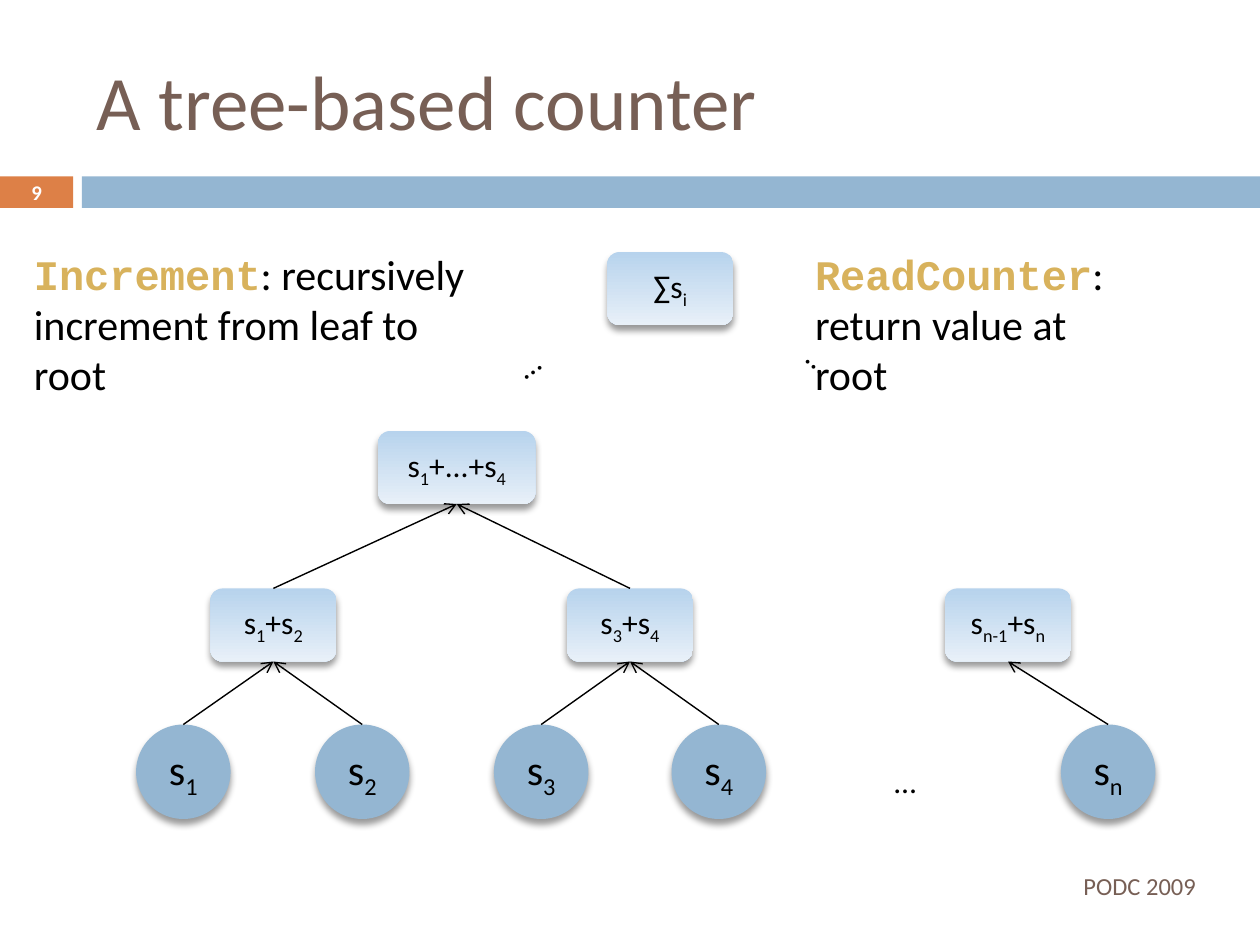
from lxml import etree
from pptx import Presentation
from pptx import util as u
from pptx.dml import color
from pptx.enum import shapes, text
from pptx.oxml import ns

BLUE, BROWN, GOLD = "94B6D2", "775F55", "D8B25C"
BLACK, WHITE, ORANGE = "000000", "FFFFFF", "DD8047"
LEFT, MID, RIGHT = text.PP_ALIGN.LEFT, text.PP_ALIGN.CENTER, text.PP_ALIGN.RIGHT

BARS = [(0, 0.58, ORANGE), (0.65, 9.35, BLUE)]
LEAVES = [("s|1", 1.08), ("s|2", 2.5), ("s|3", 3.92), ("s|4", 5.33), ("s|n", 8.42)]
SUMS = [
    ("s|1|+s|2", 1.67, 4.67, 1),
    ("s|3|+s|4", 4.5, 4.67, 1),
    ("s|n-1|+s|n", 7.5, 4.67, 1),
    ("s|1|+...+s|4", 3, 3.42, 1.25),
    ("∑s|i", 4.82, 2, 1),
]
EDGES = [
    ("s|1", "s|1|+s|2"), ("s|2", "s|1|+s|2"),
    ("s|3", "s|3|+s|4"), ("s|4", "s|3|+s|4"),
    ("s|1|+s|2", "s|1|+...+s|4"), ("s|3|+s|4", "s|1|+...+s|4"),
    ("s|n", "s|n-1|+s|n"),
]
DOTS = [(7, 6, 0), (3.99, 2.67, 324.7), (6.32, 2.68, 40.9)]
NOTES = [
    ("ReadCounter", ":", "return value at root", 6.37, 2.79),
    ("Increment", ": recursively", "increment from leaf to root", 0.17, 3.79),
]
LABELS = [
    ("A tree-based counter", (0.67, 0.25, 8.92, 1.08), 44, BROWN, LEFT, False),
    ("PODC 2009", (6.67, 6.83, 2.92, 0.4), 14, BROWN, RIGHT, False),
    ("9", (0, 1.39, 0.58, 0.27), 11.9, WHITE, MID, True),
]

prs = Presentation()
prs.slide_width, prs.slide_height = u.Inches(10), u.Inches(7.5)
slide = prs.slides.add_slide(prs.slide_layouts[6])
tree = slide.shapes


def rgb(code):
    return color.RGBColor.from_string(code)


def place(*at):
    return [u.Inches(v) for v in at]


def add_sub(top, tag, **attrs):
    return etree.SubElement(top, ns.qn(tag), attrs)


def write(para, words, size, tint=BLACK, bold=False, face="Calibri"):
    run = para.add_run()
    run.text = words
    font = run.font
    font.size, font.bold, font.name = u.Pt(size), bold, face
    font.color.rgb = rgb(tint)
    return run


def add_box(at, wrap=True, anchor=text.MSO_ANCHOR.TOP):
    box = tree.add_textbox(*place(*at))
    box.text_frame.word_wrap = wrap
    box.text_frame.vertical_anchor = anchor
    return box


def add_shape(kind, at):
    shape = tree.add_shape(kind, *place(*at))
    shape.shadow.inherit = False
    shape.line.fill.background()
    return shape


def paint(shape, tint):
    shape.fill.solid()
    shape.fill.fore_color.rgb = rgb(tint)


def shade(shape):
    fill = shape.fill
    fill.gradient()
    fill.gradient_angle = 270
    for stop, tint in zip(fill.gradient_stops, ("B7D3ED", "E8F0F8")):
        stop.color.rgb = rgb(tint)


def add_node(kind, name, at, size):
    node = add_shape(kind, at)
    effects = node._element.spPr.find(ns.qn("a:effectLst"))
    drop = add_sub(effects, "a:outerShdw", blurRad=str(u.Pt(4)), dist=str(u.Pt(3)),
                   dir="5400000", rotWithShape="0")
    add_sub(add_sub(drop, "a:srgbClr", val=BLACK), "a:alpha", val="40000")
    node.text_frame.vertical_anchor = text.MSO_ANCHOR.MIDDLE
    para = node.text_frame.paragraphs[0]
    para.alignment = MID
    for i, part in enumerate(name.split("|")):
        run = write(para, part, size)
        if i % 2:
            run._r.get_or_add_rPr().set("baseline", "-25000")
    return node


def add_edge(start, end):
    edge = tree.add_connector(shapes.MSO_CONNECTOR.STRAIGHT, 0, 0, 0, 0)
    edge.begin_connect(start, 0)
    edge.end_connect(end, 2)
    edge.line.width = u.Pt(0.79)
    edge.line.color.rgb = rgb(BLACK)
    add_sub(edge.line._get_or_add_ln(), "a:tailEnd", type="arrow")
    add_sub(edge._element.spPr, "a:effectLst")


for x, wide, tint in BARS:
    paint(add_shape(shapes.MSO_SHAPE.RECTANGLE, (x, 1.4, wide, 0.25)), tint)

nodes = {}
for name, x in LEAVES:
    nodes[name] = add_node(shapes.MSO_SHAPE.OVAL, name, (x, 5.75, 0.75, 0.75), 24)
    paint(nodes[name], BLUE)
for name, x, y, wide in SUMS:
    nodes[name] = add_node(shapes.MSO_SHAPE.ROUNDED_RECTANGLE, name, (x, y, wide, 0.58), 18)
    shade(nodes[name])
for start, end in EDGES:
    add_edge(nodes[start], nodes[end])

for x, y, turn in DOTS:
    box = add_box((x, y, 0.45, 0.4), wrap=False)
    box.rotation = turn
    write(box.text_frame.paragraphs[0], "…", 18)

for term, rest, line, x, wide in NOTES:
    frame = add_box((x, 1.92, wide, 0.91)).text_frame
    write(frame.paragraphs[0], term, 24, GOLD, True, "Courier New")
    write(frame.paragraphs[0], rest, 24)
    write(frame.add_paragraph(), line, 24)

for words, at, size, tint, align, bold in LABELS:
    para = add_box(at, anchor=text.MSO_ANCHOR.MIDDLE).text_frame.paragraphs[0]
    para.alignment = align
    write(para, words, size, tint, bold)

prs.save("out.pptx")
